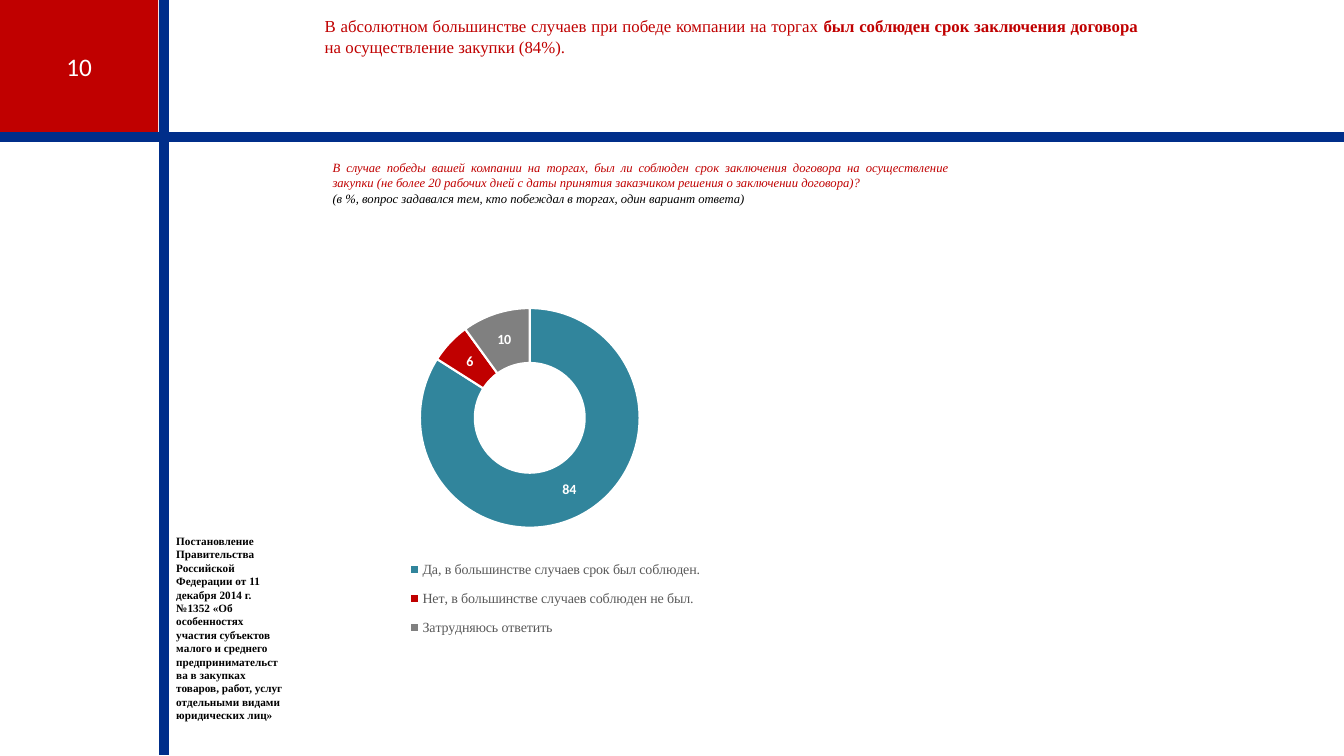
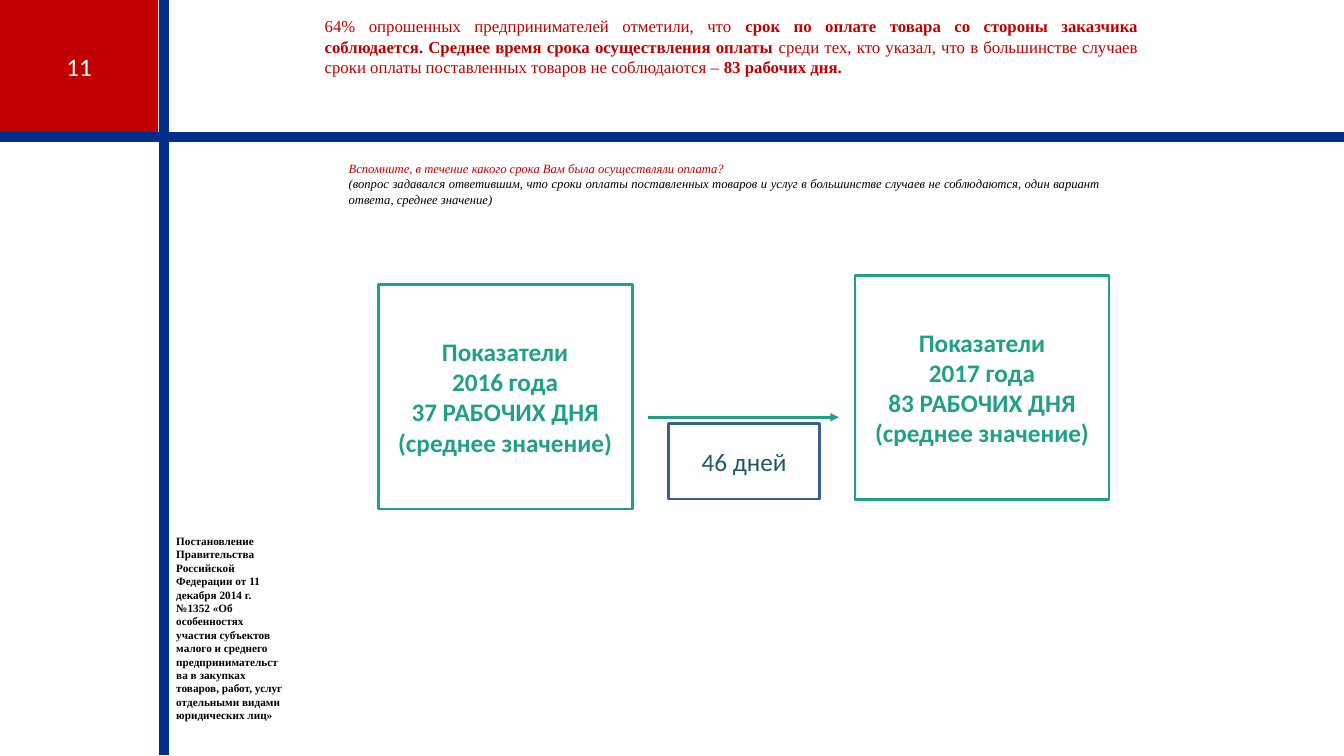
from dataclasses import dataclass

from lxml import etree
from pptx import Presentation
from pptx.chart.data import CategoryChartData
from pptx.dml.color import RGBColor
from pptx.enum.chart import XL_CHART_TYPE, XL_LEGEND_POSITION
from pptx.enum.shapes import MSO_CONNECTOR, MSO_SHAPE
from pptx.enum.text import MSO_ANCHOR, MSO_AUTO_SIZE, PP_ALIGN
from pptx.oxml import parse_xml
from pptx.oxml.ns import nsdecls, qn
from pptx.util import Emu, Pt

# Scale: 100 px to the inch
EMU_PER_PX = 9144

# Colours
RED = RGBColor(0xC0, 0x00, 0x00)
NAVY = RGBColor(0x00, 0x2E, 0x8A)
GREEN = RGBColor(0x21, 0x9F, 0x87)
STEEL = RGBColor(0x3A, 0x5F, 0x8C)
TEAL = RGBColor(0x31, 0x85, 0x9C)
DARK_TEAL = RGBColor(0x21, 0x59, 0x68)
GRAY = RGBColor(0x80, 0x80, 0x80)
DARK_GRAY = RGBColor(0x59, 0x59, 0x59)
BLACK = RGBColor(0x00, 0x00, 0x00)
WHITE = RGBColor(0xFF, 0xFF, 0xFF)

# Fonts
SERIF = "Times New Roman"
SANS = "Calibri"

DECREE = (
    "Постановление Правительства Российской Федерации от 11 декабря 2014 г. "
    "№1352 «Об особенностях участия субъектов малого и среднего "
    "предпринимательства в закупках товаров, работ, услуг отдельными видами "
    "юридических лиц»"
)


@dataclass(frozen=True)
class Area:
    left: int
    top: int
    width: int
    height: int

    def emu(self) -> tuple:
        return tuple(map(px, (self.left, self.top, self.width, self.height)))


@dataclass(frozen=True)
class Style:
    font: str
    size: int
    color: RGBColor
    bold: bool = False
    italic: bool = False
    align: PP_ALIGN = PP_ALIGN.LEFT


@dataclass(frozen=True)
class Span:
    text: str
    bold: bool = False


@dataclass(frozen=True)
class Line:
    spans: tuple
    style: Style


@dataclass(frozen=True)
class Indicator:
    area: Area
    year: int
    days: int


@dataclass(frozen=True)
class Answer:
    label: str
    percent: int
    color: RGBColor


TITLE = Style(SERIF, 12, RED, align=PP_ALIGN.JUSTIFY)
QUESTION = Style(SERIF, 9, RED, italic=True, align=PP_ALIGN.JUSTIFY)
QUESTION_NOTE = Style(SERIF, 9, BLACK, italic=True, align=PP_ALIGN.JUSTIFY)
SOURCE = Style(SERIF, 8, BLACK, bold=True)
PAGE_NUMBER = Style(SANS, 18, WHITE, align=PP_ALIGN.CENTER)
INDICATOR = Style(SANS, 18, GREEN, bold=True, align=PP_ALIGN.CENTER)
DIFFERENCE = Style(SANS, 18, DARK_TEAL, align=PP_ALIGN.CENTER)

ANSWERS = (
    Answer("Да, в большинстве случаев срок был соблюден.", 84, TEAL),
    Answer("Нет, в большинстве случаев соблюден не был.", 6, RED),
    Answer("Затрудняюсь ответить", 10, GRAY),
)

INDICATORS = (
    Indicator(Area(375, 282, 252, 223), 2016, 37),
    Indicator(Area(848, 273, 252, 223), 2017, 83),
)


def px(length: int) -> Emu:
    return Emu(length * EMU_PER_PX)


# Text
def set_font(font, style: Style) -> None:
    font.name = style.font
    font.size = Pt(style.size)
    font.bold = style.bold
    font.italic = style.italic
    font.color.rgb = style.color


def write_lines(frame, lines: list, anchor=MSO_ANCHOR.TOP) -> None:
    frame.word_wrap = True
    frame.auto_size = MSO_AUTO_SIZE.NONE
    frame.vertical_anchor = anchor
    for index, line in enumerate(lines):
        para = frame.add_paragraph() if index else frame.paragraphs[0]
        para.alignment = line.style.align
        set_font(para.font, line.style)
        for span in line.spans:
            run = para.add_run()
            run.text = span.text
            if span.bold:
                run.font.bold = True


def plain(text: str, style: Style) -> Line:
    return Line((Span(text),), style)


def add_text(page, area: Area, lines: list) -> None:
    write_lines(page.shapes.add_textbox(*area.emu()).text_frame, lines)


# Shapes
def add_box(page, area: Area, lines: list, fill=None, outline=None) -> None:
    box = page.shapes.add_shape(MSO_SHAPE.RECTANGLE, *area.emu())
    box.shadow.inherit = False
    if fill is None:
        box.fill.background()
    else:
        box.fill.solid()
        box.fill.fore_color.rgb = fill
    if outline is None:
        box.line.fill.background()
    else:
        box.line.color.rgb = outline
        box.line.width = Pt(2)
    write_lines(box.text_frame, lines, MSO_ANCHOR.MIDDLE)


def add_line(page, start: tuple, end: tuple, color: RGBColor, width: int,
             arrow: bool = False) -> None:
    line = page.shapes.add_connector(
        MSO_CONNECTOR.STRAIGHT, *map(px, start + end))
    line.line.color.rgb = color
    line.line.width = Pt(width)
    properties = line.element.spPr
    if arrow:
        outline = properties.find(qn("a:ln"))
        etree.SubElement(outline, qn("a:tailEnd"), type="triangle")
    etree.SubElement(properties, qn("a:effectLst"))


# Shared frame: title, page number, cross of bands, source of the rule
def add_page(deck, number: int, title_height: int, title: tuple):
    page = deck.slides.add_slide(deck.slide_layouts[5])
    add_box(page, Area(0, 0, 157, 132), [plain(str(number), PAGE_NUMBER)], RED)
    add_line(page, (163, -1), (163, 749), NAVY, 7)
    add_line(page, (-1, 136), (1335, 136), NAVY, 7)
    heading = page.shapes.title
    heading.left, heading.top, heading.width, heading.height = Area(
        312, 11, 827, title_height).emu()
    write_lines(heading.text_frame, [Line(title, TITLE)])
    add_text(page, Area(165, 525, 126, 212), [plain(DECREE, SOURCE)])
    return page


def add_question(page, area: Area, question: str, note: str) -> None:
    add_text(page, area, [plain(question, QUESTION),
                          plain(note, QUESTION_NOTE)])


# Chart
def set_layout(part, place: tuple, inner: bool = False) -> None:
    target = '<c:layoutTarget val="inner"/>' if inner else ""
    modes = "".join(f'<c:{side}Mode val="edge"/>' for side in "xy")
    sizes = "".join(f'<c:{side} val="{value}"/>'
                    for side, value in zip("xywh", place))
    layout = parse_xml(
        f'<c:layout {nsdecls("c")}><c:manualLayout>{target}{modes}{sizes}'
        "</c:manualLayout></c:layout>")
    for old in part.findall(qn("c:layout")):
        part.remove(old)
    position = part.find(qn("c:legendPos"))
    if position is None:
        part.insert(0, layout)
    else:
        position.addnext(layout)


def add_answer_chart(page, area: Area) -> None:
    data = CategoryChartData(number_format="#,##0")
    data.categories = [answer.label for answer in ANSWERS]
    data.add_series("Series 1", [answer.percent for answer in ANSWERS])
    chart = page.shapes.add_chart(
        XL_CHART_TYPE.DOUGHNUT, *area.emu(), data).chart
    chart.has_title = False
    set_font(chart.font, Style(SANS, 10, BLACK))

    plot = chart.plots[0]
    plot.vary_by_categories = True
    plot.has_data_labels = True
    labels = plot.data_labels
    labels.show_value = True
    labels.show_percentage = False
    labels.number_format = "#,##0"
    labels.number_format_is_linked = False
    set_font(labels.font, Style(SANS, 10, WHITE, bold=True))
    for index, answer in enumerate(ANSWERS):
        slice_format = plot.series[0].points[index].format
        slice_format.fill.solid()
        slice_format.fill.fore_color.rgb = answer.color
        slice_format.line.color.rgb = WHITE
        slice_format.line.width = Pt(1.5)

    chart.has_legend = True
    legend = chart.legend
    legend.position = XL_LEGEND_POSITION.BOTTOM
    legend.include_in_layout = False
    set_font(legend.font, Style(SERIF, 10, DARK_GRAY))

    # Hole size and manual places of the ring and the legend
    space = chart.element
    space.find(".//" + qn("c:holeSize")).set("val", "45")
    set_layout(space.find(".//" + qn("c:plotArea")),
               (0.08, 0.12, 0.52, 0.56), inner=True)
    set_layout(space.find(".//" + qn("c:legend")), (0.04, 0.73, 0.72, 0.25))


# Slides
def build_contract_page(deck) -> None:
    page = add_page(deck, 10, 50, (
        Span("В абсолютном большинстве случаев при победе компании на торгах "),
        Span("был соблюден срок заключения договора ", bold=True),
        Span("на осуществление закупки (84%)."),
    ))
    add_question(
        page, Area(320, 154, 630, 56),
        "В случае победы вашей компании на торгах, был ли соблюден срок "
        "заключения договора на осуществление закупки (не более 20 рабочих "
        "дней с даты принятия заказчиком решения о заключении договора)?",
        "(в %, вопрос задавался тем, кто побеждал в торгах, один вариант "
        "ответа)")
    add_answer_chart(page, Area(383, 257, 419, 394))


def build_payment_page(deck) -> None:
    page = add_page(deck, 11, 71, (
        Span("64% опрошенных предпринимателей отметили, что "),
        Span("срок по оплате товара со стороны заказчика соблюдается. "
             "Среднее время срока осуществления оплаты ", bold=True),
        Span("среди тех, кто указал, что в большинстве случаев сроки оплаты "
             "поставленных товаров не соблюдаются – "),
        Span("83 рабочих дня.", bold=True),
    ))
    add_question(
        page, Area(336, 155, 764, 56),
        "Вспомните, в течение какого срока Вам была осуществляли оплата?",
        "(вопрос задавался ответившим, что сроки оплаты поставленных товаров "
        "и услуг в большинстве случаев не соблюдаются, один вариант ответа, "
        "среднее значение)")
    for indicator in INDICATORS:
        texts = ("Показатели", f"{indicator.year} года",
                 f"{indicator.days} РАБОЧИХ ДНЯ (среднее значение)")
        add_box(page, indicator.area,
                [plain(text, INDICATOR) for text in texts], WHITE, GREEN)
    add_line(page, (643, 414), (832, 414), GREEN, 2, arrow=True)
    before, after = INDICATORS
    add_box(page, Area(663, 420, 150, 75),
            [plain(f"{after.days - before.days} дней", DIFFERENCE)],
            outline=STEEL)


def main() -> None:
    deck = Presentation()
    deck.slide_width, deck.slide_height = px(1333), px(750)
    build_contract_page(deck)
    build_payment_page(deck)
    deck.save("out.pptx")


if __name__ == "__main__":
    main()
